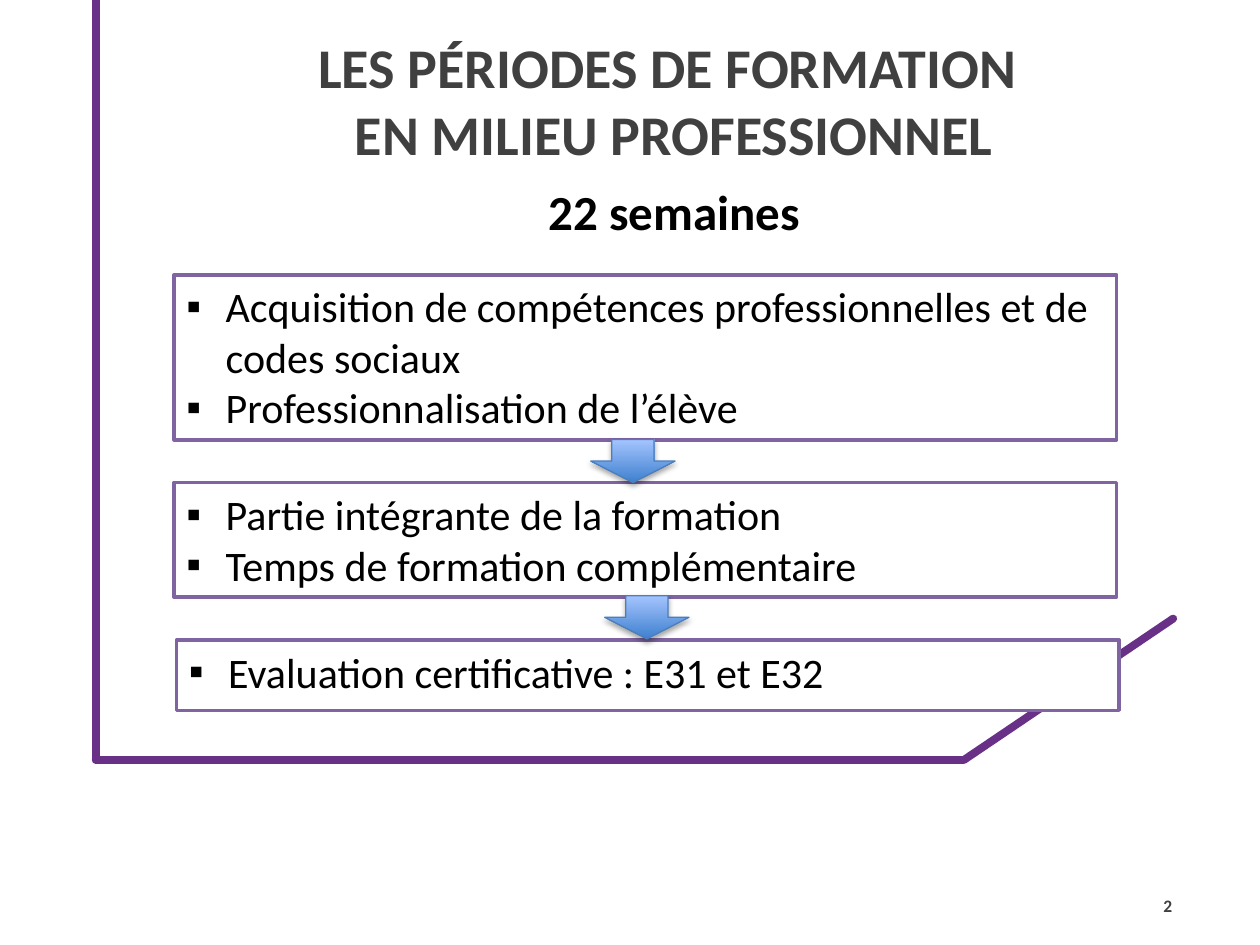
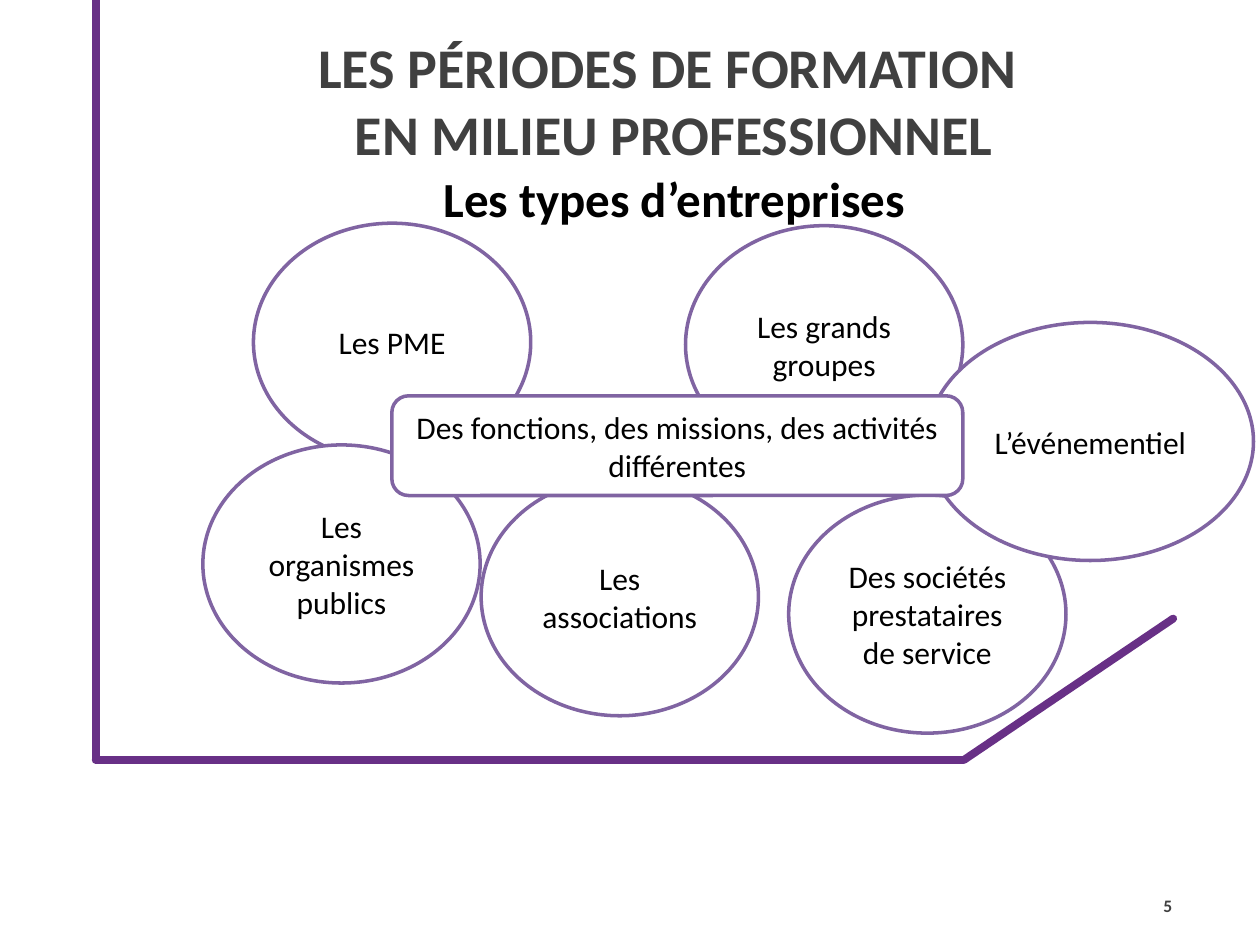
from dataclasses import dataclass

from lxml.etree import SubElement
from pptx import Presentation
from pptx.dml.color import RGBColor
from pptx.enum.shapes import MSO_CONNECTOR, MSO_SHAPE
from pptx.enum.text import MSO_ANCHOR as ANCHOR, MSO_AUTO_SIZE, PP_ALIGN as ALIGN
from pptx.oxml.ns import qn
from pptx.slide import Slide
from pptx.text.text import TextFrame
from pptx.util import Cm, Pt

FONT = "Calibri"
COLORS = {
    "frame": "683086",
    "outline": "8064A2",
    "title": "404040",
    "text": "000000",
    "paper": "FFFFFF",
    "arrow_dark": "3F80CE",
    "arrow_light": "A4C4FF",
    "arrow_line": "4B7EBC",
}
TITLE = "LES PÉRIODES DE FORMATION \nEN MILIEU PROFESSIONNEL"
BAND_LEFT, BAND_WIDTH = 2.49, 22.2
FRAME = [
    ((1.93, 15.3), (1.93, 0)),
    ((1.93, 15.32), (19.41, 15.32)),
    ((19.43, 15.32), (23.65, 12.47)),
]


@dataclass(frozen=True)
class Panel:
    text: str
    left: float
    top: float
    width: float
    height: float
    shape: MSO_SHAPE
    size: int = 18
    bulleted: bool = False


@dataclass(frozen=True)
class StepArrow:
    left: float
    top: float


def step(text: str, left: float, top: float, height: float) -> Panel:
    return Panel(text, left, top, 19, height, MSO_SHAPE.RECTANGLE, 24, True)


def bubble(text: str, left: float, top: float, width: float = 5.59) -> Panel:
    return Panel(text, left, top, width, 4.8, MSO_SHAPE.FLOWCHART_CONNECTOR)


STEPS = [
    step("Acquisition de compétences professionnelles et de codes sociaux\n"
         "Professionnalisation de l’élève", 3.51, 5.54, 3.33),
    step("Partie intégrante de la formation\nTemps de formation complémentaire",
         3.51, 9.73, 2.31),
    step("Evaluation certificative : E31 et E32", 3.56, 12.9, 1.42),
]
STEP_ARROWS = [StepArrow(11.91, 8.86), StepArrow(12.19, 12.01)]
COMPANY_TYPES = [
    bubble("Les PME", 5.11, 4.5),
    bubble("Les grands groupes", 13.82, 4.55),
    bubble("Les associations", 9.7, 9.63),
    bubble("Les organismes publics", 4.09, 8.97),
    bubble("Des sociétés prestataires de service", 15.9, 9.98),
    bubble("L’événementiel", 18.69, 6.5, 6.58),
    Panel("Des fonctions, des missions, des activités différentes",
          7.9, 7.98, 11.51, 2.01, MSO_SHAPE.ROUNDED_RECTANGLE),
]


def rgb(name: str) -> RGBColor:
    return RGBColor.from_string(COLORS[name])


def write(tf: TextFrame, text: str, size: int, color: str = "text",
          bold: bool = False, align: ALIGN = ALIGN.CENTER,
          anchor: ANCHOR = ANCHOR.TOP, bulleted: bool = False) -> None:
    tf.text = text
    tf.word_wrap = True
    tf.auto_size = MSO_AUTO_SIZE.NONE
    tf.vertical_anchor = anchor
    for p in tf.paragraphs:
        p.alignment = align
        if bulleted:
            add_bullet(p)
        for r in p.runs:
            r.font.name = FONT
            r.font.size = Pt(size)
            r.font.bold = bold
            r.font.color.rgb = rgb(color)


def add_bullet(p) -> None:
    pPr = p._p.get_or_add_pPr()
    pPr.set("marL", str(Cm(0.79)))
    pPr.set("indent", str(-Cm(0.79)))
    SubElement(pPr, qn("a:buFont"), typeface="Arial")
    SubElement(pPr, qn("a:buChar"), char="▪")


def add_label(slide: Slide, text: str, left: float, top: float, width: float,
              height: float, size: int, **style) -> None:
    sp = slide.shapes.add_textbox(Cm(left), Cm(top), Cm(width), Cm(height))
    write(sp.text_frame, text, size, bold=True, **style)


def add_frame(slide: Slide) -> None:
    for start, end in FRAME:
        line = slide.shapes.add_connector(
            MSO_CONNECTOR.STRAIGHT, *(Cm(v) for v in start + end))
        line.line.color.rgb = rgb("frame")
        line.line.width = Pt(4.5)
        line.line._get_or_add_ln().set("cap", "rnd")
        SubElement(line._element.spPr, qn("a:effectLst"))


def add_panel(slide: Slide, panel: Panel) -> None:
    sp = slide.shapes.add_shape(panel.shape, Cm(panel.left), Cm(panel.top),
                                Cm(panel.width), Cm(panel.height))
    sp.shadow.inherit = False
    sp.fill.solid()
    sp.fill.fore_color.rgb = rgb("paper")
    sp.line.color.rgb = rgb("outline")
    sp.line.width = Pt(2)
    write(sp.text_frame, panel.text, panel.size, bulleted=panel.bulleted,
          align=ALIGN.LEFT if panel.bulleted else ALIGN.CENTER,
          anchor=ANCHOR.TOP if panel.bulleted else ANCHOR.MIDDLE)


def add_step_arrow(slide: Slide, arrow: StepArrow) -> None:
    sp = slide.shapes.add_shape(MSO_SHAPE.DOWN_ARROW, Cm(arrow.left),
                                Cm(arrow.top), Cm(1.7), Cm(0.87))
    sp.fill.gradient()
    sp.fill.gradient_angle = 90
    for stop, name, position in zip(sp.fill.gradient_stops,
                                    ("arrow_dark", "arrow_light"), (0, 1)):
        stop.color.rgb = rgb(name)
        stop.position = position
    sp.line.color.rgb = rgb("arrow_line")
    sp.line.width = Pt(0.75)
    sp.shadow.inherit = False
    effects = sp._element.spPr.find(qn("a:effectLst"))
    shadow = SubElement(effects, qn("a:outerShdw"), blurRad=str(Pt(3.1)),
                        dist=str(Pt(1.8)), dir="5400000", rotWithShape="0")
    color = SubElement(shadow, qn("a:srgbClr"), val=COLORS["text"])
    SubElement(color, qn("a:alpha"), val="35000")


def add_page(prs: Presentation, number: int, subtitle: str,
             subtitle_top: float) -> Slide:
    slide = prs.slides.add_slide(prs.slide_layouts[5])
    add_frame(slide)
    add_label(slide, str(number), 22.76, 17.75, 1.12, 1.02, 10, color="title",
              align=ALIGN.RIGHT, anchor=ANCHOR.MIDDLE)
    title = slide.shapes.title
    title.left, title.top = Cm(BAND_LEFT), Cm(0.53)
    title.width, title.height = Cm(BAND_WIDTH), Cm(2.92)
    write(title.text_frame, TITLE, 32, "title", bold=True)
    add_label(slide, subtitle, BAND_LEFT, subtitle_top, BAND_WIDTH, 1.5, 28)
    return slide


def main() -> None:
    prs = Presentation()
    prs.slide_width, prs.slide_height = Cm(25.4), Cm(19.05)

    slide = add_page(prs, 2, "22 semaines", 3.53)
    for panel in STEPS:
        add_panel(slide, panel)
    for arrow in STEP_ARROWS:
        add_step_arrow(slide, arrow)

    slide = add_page(prs, 5, "Les types d’entreprises", 3.28)
    for panel in COMPANY_TYPES:
        add_panel(slide, panel)

    prs.save("out.pptx")


if __name__ == "__main__":
    main()
